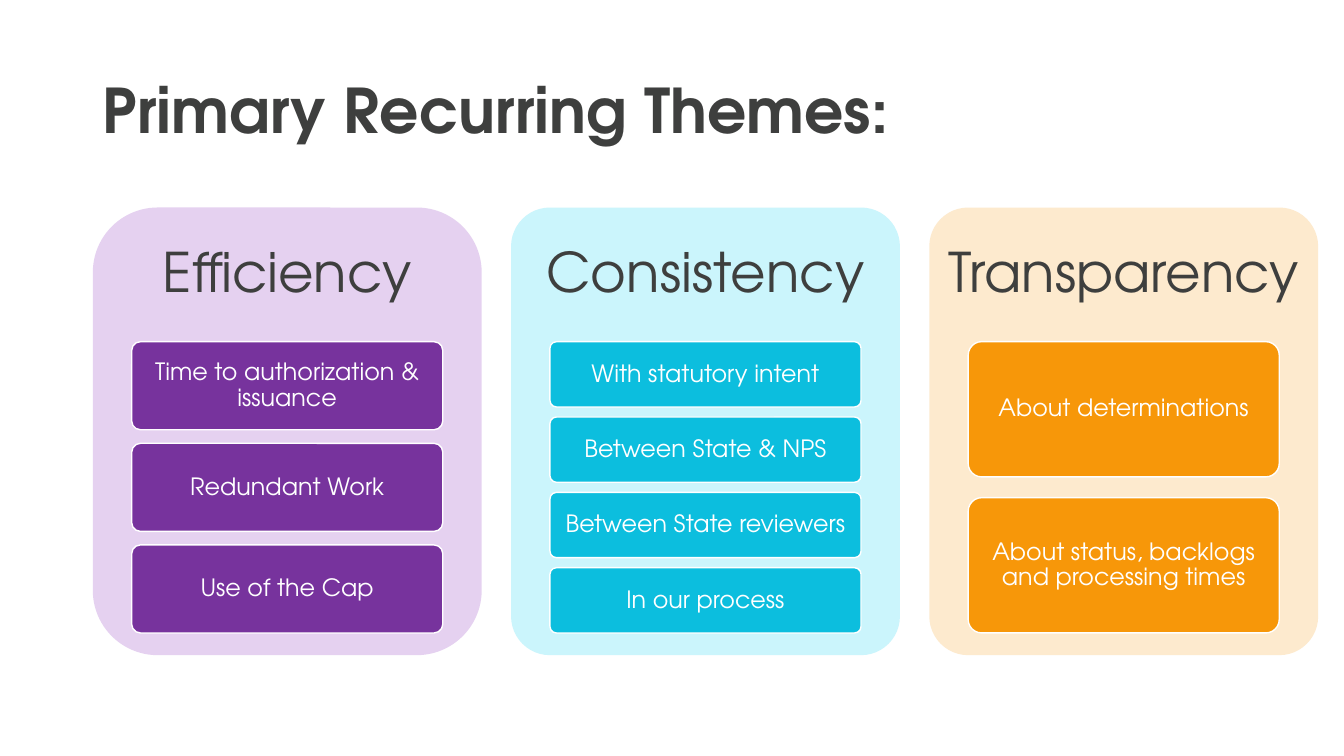
from pptx import Presentation
from pptx.dml.color import RGBColor
from pptx.enum import shapes, text
from pptx.util import Cm, Pt

FONT = "TeX Gyre Adventor"
CHARCOAL = RGBColor(0x3E, 0x3F, 0x3E)
WHITE = RGBColor(0xFF, 0xFF, 0xFF)
PURPLE = RGBColor(0x77, 0x33, 0x9D)
LILAC = RGBColor(0xE5, 0xD1, 0xF0)
CYAN = RGBColor(0x0C, 0xBE, 0xDE)
PALE_CYAN = RGBColor(0xCB, 0xF5, 0xFC)
ORANGE = RGBColor(0xF7, 0x97, 0x09)
PALE_ORANGE = RGBColor(0xFD, 0xEA, 0xCE)

THEMES = [
    ("Efficiency", LILAC, PURPLE, 0.1667,
     ["Time to authorization & issuance", "Redundant Work", "Use of the Cap"]),
    ("Consistency", PALE_CYAN, CYAN, 0.1,
     ["With statutory intent", "Between State & NPS", "Between State reviewers", "In our process"]),
    ("Transparency", PALE_ORANGE, ORANGE, 0.1,
     ["About determinations", "About status, backlogs and processing times"]),
]
LEFT, TOP, PITCH = 2.34, 5.23, 10.54
PANEL_WIDTH, PANEL_HEIGHT, HEADING_HEIGHT = 9.8, 11.28, 3.38
CARD_INSET, CARD_WIDTH, STACK_HEIGHT = 0.98, 7.84, 7.34
GAP_RATIO = 0.154


def write(shape, words, size, color, align, inset_x, inset_y):
    frame = shape.text_frame
    frame.word_wrap = True
    frame.auto_size = text.MSO_AUTO_SIZE.NONE
    frame.vertical_anchor = text.MSO_ANCHOR.MIDDLE
    frame.margin_left = frame.margin_right = Cm(inset_x)
    frame.margin_top = frame.margin_bottom = Cm(inset_y)
    frame.text = words
    paragraph = frame.paragraphs[0]
    paragraph.alignment = align
    paragraph.line_spacing = 0.9
    paragraph.font.name = FONT
    paragraph.font.size = Pt(size)
    paragraph.font.color.rgb = color
    return paragraph


def add_rounded(left, top, width, height, radius, fill):
    shape = slide.shapes.add_shape(shapes.MSO_SHAPE.ROUNDED_RECTANGLE,
                                   Cm(left), Cm(top), Cm(width), Cm(height))
    shape.adjustments[0] = radius
    shape.shadow.inherit = False
    shape.fill.solid()
    shape.fill.fore_color.rgb = fill
    shape.line.fill.background()
    return shape


prs = Presentation()
prs.slide_width, prs.slide_height = Cm(33.87), Cm(19.05)
slide = prs.slides.add_slide(prs.slide_layouts[5])

title = slide.shapes.title
title.left, title.top, title.width, title.height = Cm(LEFT), Cm(1.02), Cm(29.21), Cm(3.68)
write(title, "Primary Recurring Themes:", 44, CHARCOAL,
      text.PP_ALIGN.LEFT, 0.25, 0.13).font.bold = True

for column, (theme, tint, accent, radius, points) in enumerate(THEMES):
    left = LEFT + column * PITCH
    add_rounded(left, TOP, PANEL_WIDTH, PANEL_HEIGHT, radius, tint)
    heading = slide.shapes.add_textbox(Cm(left), Cm(TOP), Cm(PANEL_WIDTH), Cm(HEADING_HEIGHT))
    write(heading, theme, 39, CHARCOAL, text.PP_ALIGN.CENTER, 0.4, 0.4)

    card_height = STACK_HEIGHT / (len(points) + GAP_RATIO * (len(points) - 1))
    for row, point in enumerate(points):
        card_top = TOP + HEADING_HEIGHT + row * card_height * (1 + GAP_RATIO)
        card = add_rounded(left + CARD_INSET, card_top, CARD_WIDTH, card_height, 0.1, accent)
        card.line.color.rgb = WHITE
        card.line.width = Pt(1)
        write(card, point, 17, WHITE, text.PP_ALIGN.CENTER, 0.12, 0.09)

prs.save("out.pptx")
